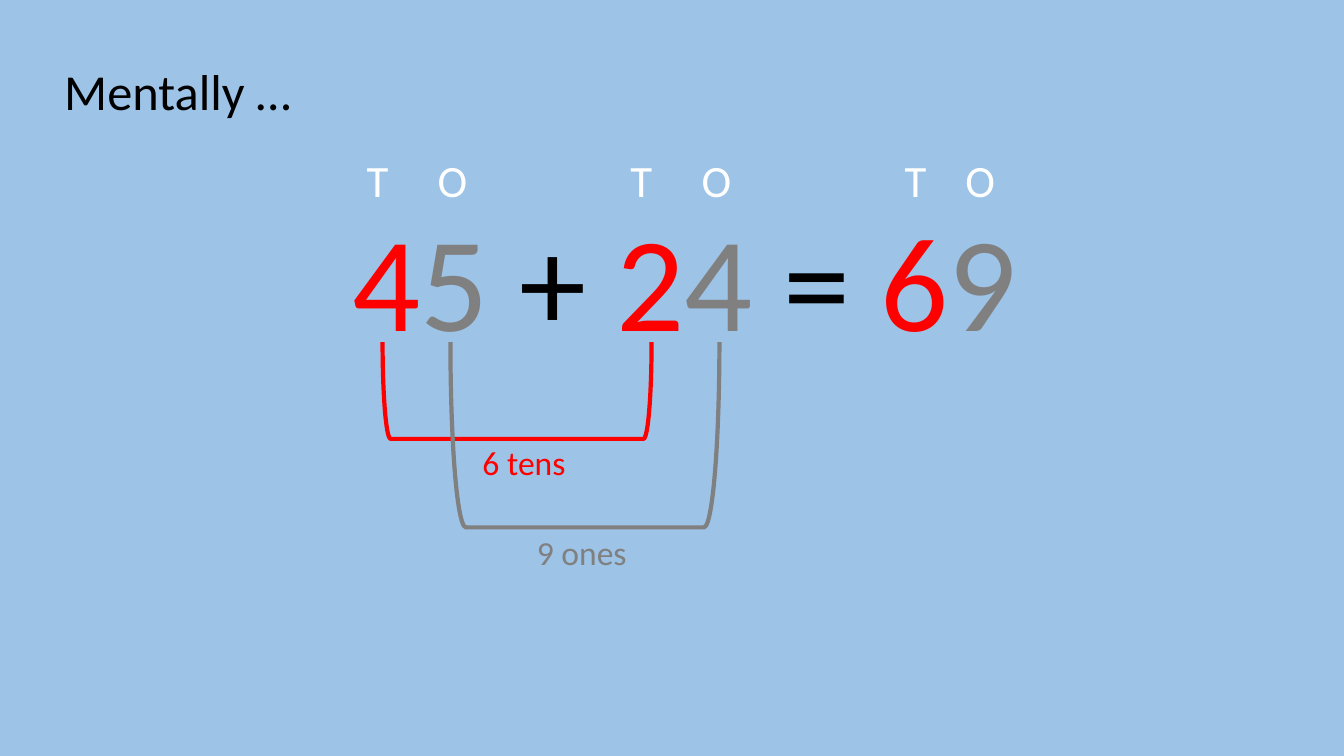
from dataclasses import dataclass

from lxml.etree import SubElement
from pptx import Presentation
from pptx.dml.color import RGBColor
from pptx.enum.shapes import MSO_SHAPE as Preset
from pptx.enum.text import MSO_AUTO_SIZE as AutoSize
from pptx.oxml.ns import qn
from pptx.slide import Slide
from pptx.text.text import _Paragraph as Paragraph
from pptx.util import Cm, Pt

FONT = "Calibri"
SKY, WHITE, BLACK = "9DC3E6", "FFFFFF", "000000"
TENS, ONES = "FF0000", "808080"
BRACKET_TOP, BRACKET_SPAN = 8.62, 6.78
COLUMN_TABS = (1.79, 6.65, 8.44, 13.56, 15.09)


@dataclass
class Label:
    """Text made of (words, colour) pieces; lengths in centimetres, size in points."""
    left: float
    top: float
    width: float
    height: float
    size: int
    pieces: list[tuple[str, str]]


@dataclass
class Bracket:
    """Bracket opening upwards that joins two digits."""
    left: float
    depth: float
    colour: str


TITLE = Label(1.37, 1.4, 10.85, 1.8, 36, [("Mentally …", BLACK)])
COLUMN_HEADINGS = Label(8.99, 3.73, 18.24, 1.63, 32, [("T\tO\tT\tO\tT\tO", WHITE)])
EQUATION = Label(8.64, 4.85, 19.18, 4.37, 96, [
    ("4", TENS), ("5 ", ONES), ("+ ", BLACK),
    ("2", TENS), ("4 ", ONES), ("= ", BLACK),
    ("6", TENS), ("9", ONES),
])
BRACKETS = [Bracket(9.64, 2.44, TENS), Bracket(11.35, 4.67, ONES)]
SUMS = [
    Label(11.91, 11, 4.01, 1.27, 24, [("6 tens", TENS)]),
    Label(13.28, 13.28, 3.4, 1.27, 24, [("9 ones", ONES)]),
]


def rgb(colour: str) -> RGBColor:
    return RGBColor.from_string(colour)


def add_label(slide: Slide, label: Label) -> Paragraph:
    box = slide.shapes.add_textbox(
        Cm(label.left), Cm(label.top), Cm(label.width), Cm(label.height))
    box.text_frame.word_wrap = True
    box.text_frame.auto_size = AutoSize.SHAPE_TO_FIT_TEXT
    paragraph = box.text_frame.paragraphs[0]
    for words, colour in label.pieces:
        run = paragraph.add_run()
        run.text = words
        run.font.name = FONT
        run.font.size = Pt(label.size)
        run.font.color.rgb = rgb(colour)
    return paragraph


def set_tab_stops(paragraph: Paragraph, positions: tuple[float, ...]) -> None:
    properties = paragraph._p.get_or_add_pPr()
    tab_list = SubElement(properties, qn("a:tabLst"))
    for position in positions:
        SubElement(tab_list, qn("a:tab"), pos=str(Cm(position)), algn="l")


def add_bracket(slide: Slide, bracket: Bracket) -> None:
    """Place the upright preset so that a quarter turn lands it under the digits."""
    shift = (BRACKET_SPAN - bracket.depth) / 2
    shape = slide.shapes.add_shape(
        Preset.RIGHT_BRACKET,
        Cm(bracket.left + shift), Cm(BRACKET_TOP - shift),
        Cm(bracket.depth), Cm(BRACKET_SPAN))
    shape.rotation = 90
    shape.shadow.inherit = False
    shape.fill.background()
    shape.line.color.rgb = rgb(bracket.colour)
    shape.line.width = Pt(3)


def main() -> None:
    presentation = Presentation()
    presentation.slide_width, presentation.slide_height = Cm(33.87), Cm(19.05)
    slide = presentation.slides.add_slide(presentation.slide_layouts[6])
    slide.background.fill.solid()
    slide.background.fill.fore_color.rgb = rgb(SKY)

    set_tab_stops(add_label(slide, COLUMN_HEADINGS), COLUMN_TABS)
    add_label(slide, EQUATION)
    add_label(slide, TITLE)
    for bracket in BRACKETS:
        add_bracket(slide, bracket)
    for label in SUMS:
        add_label(slide, label)
    presentation.save("out.pptx")


if __name__ == "__main__":
    main()
